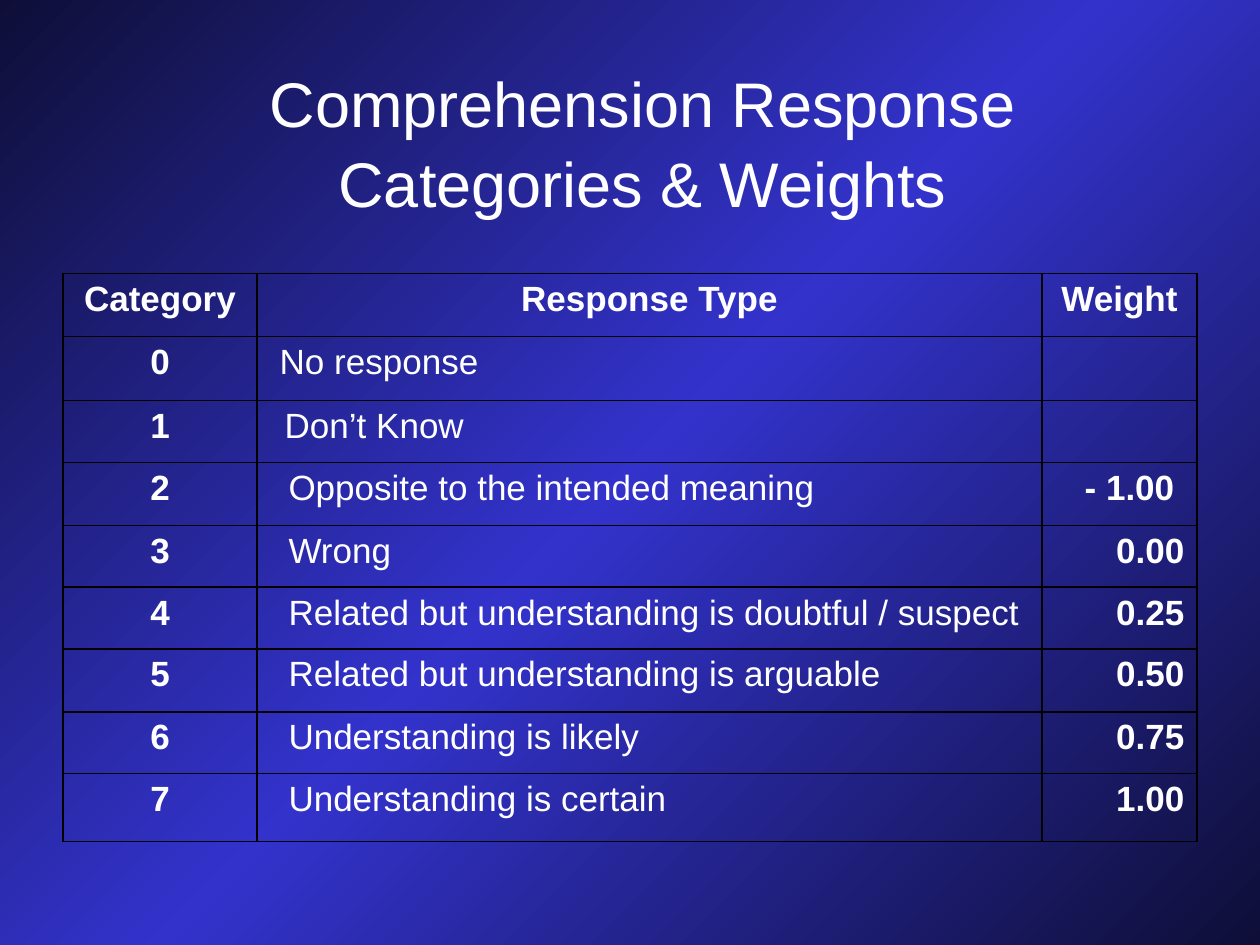
import copy
from dataclasses import dataclass

import pptx
import pptx.dml.color
import pptx.enum.text
import pptx.oxml
import pptx.oxml.ns
import pptx.util

Inches = pptx.util.Inches
Align = pptx.enum.text.PP_ALIGN


@dataclass(frozen=True)
class Theme:
    font: str = "Arial"
    text: str = "FFFFFF"
    border: str = "000000"
    background: tuple = ((0, "0E0E38"), (0.5, "3333CC"), (1, "0E0E38"))
    title_size: int = 36
    table_size: int = 20
    border_width: float = 1


class SlideBuilder:
    """Draws styled elements on the current slide."""

    def __init__(self, slide, theme):
        self.slide = slide
        self.theme = theme

    def background(self):
        fill = self.slide.background.fill
        fill.gradient()
        fill.gradient_angle = 315
        stop_list = fill._fill._gradFill.gsLst
        stop_list.append(copy.deepcopy(stop_list[-1]))
        for stop, (position, color) in zip(fill.gradient_stops, self.theme.background):
            stop.position = position
            stop.color.rgb = pptx.dml.color.RGBColor.from_string(color)

    def style_text(self, paragraph, text, size, align, bold=False):
        paragraph.text = text
        paragraph.alignment = align
        formats = {"name": self.theme.font, "size": pptx.util.Pt(size), "bold": bold}
        for attribute, value in formats.items():
            setattr(paragraph.font, attribute, value)
        paragraph.font.color.rgb = pptx.dml.color.RGBColor.from_string(self.theme.text)

    def title(self, text, left, top, width, height):
        box = self.slide.shapes.add_textbox(
            Inches(left), Inches(top), Inches(width), Inches(height))
        frame = box.text_frame
        frame.word_wrap = True
        frame.vertical_anchor = pptx.enum.text.MSO_ANCHOR.MIDDLE
        self.style_text(frame.paragraphs[0], text, self.theme.title_size, Align.CENTER)
        frame.paragraphs[0].line_spacing = 1.05

    def borders(self, cell):
        properties = cell._tc.get_or_add_tcPr()
        width = pptx.util.Pt(self.theme.border_width)
        for index, side in enumerate(("lnL", "lnR", "lnT", "lnB")):
            properties.insert(index, pptx.oxml.parse_xml(
                f'<a:{side} {pptx.oxml.ns.nsdecls("a")} w="{width}"><a:solidFill>'
                f'<a:srgbClr val="{self.theme.border}"/></a:solidFill></a:{side}>'))

    def table(self, left, top, widths, heights):
        grid = self.slide.shapes.add_table(
            len(heights), len(widths), Inches(left), Inches(top),
            Inches(sum(widths)), Inches(sum(heights))).table
        grid.first_row = grid.horz_banding = False
        for column, width in zip(grid.columns, widths):
            column.width = Inches(width)
        for row, height in zip(grid.rows, heights):
            row.height = Inches(height)
        for cell in grid.iter_cells():
            cell.fill.background()
            self.borders(cell)
        return grid

    def cell(self, cell, text, align, bold=True, indent=0):
        side = "margin_right" if align == Align.RIGHT else "margin_left"
        setattr(cell, side, Inches(0.1 + indent))
        self.style_text(
            cell.text_frame.paragraphs[0], text, self.theme.table_size, align, bold)


HEADINGS = ("Category", "Response Type", "Weight")
RESPONSES = (
    ("No response", 0.08, "", 0),
    ("Don’t Know", 0.12, "", 0),
    ("Opposite to the intended meaning", 0.15, "- 1.00", 0.08),
    ("Wrong", 0.15, "0.00", 0),
    ("Related but understanding is doubtful / suspect", 0.15, "0.25", 0),
    ("Related but understanding is arguable", 0.15, "0.50", 0),
    ("Understanding is likely", 0.15, "0.75", 0),
    ("Understanding is certain", 0.15, "1.00", 0),
)


def main():
    deck = pptx.Presentation()
    deck.slide_width, deck.slide_height = Inches(10), Inches(7.5)
    builder = SlideBuilder(deck.slides.add_slide(deck.slide_layouts[6]), Theme())
    builder.background()

    weights = builder.table(
        0.5, 2.17, (1.54, 6.23, 1.23), (0.5, 0.51, *(0.49, 0.5, 0.49) * 2, 0.54))
    for column, heading in enumerate(HEADINGS):
        builder.cell(weights.cell(0, column), heading, Align.CENTER)
    for category, (response, indent, weight, inset) in enumerate(RESPONSES):
        row = category + 1
        builder.cell(weights.cell(row, 0), str(category), Align.CENTER)
        builder.cell(weights.cell(row, 1), response, Align.LEFT, False, indent)
        if weight:
            builder.cell(weights.cell(row, 2), weight, Align.RIGHT, indent=inset)

    builder.title("Comprehension Response Categories & Weights", 0.85, 0.49, 8.5, 1.25)
    deck.save("out.pptx")


if __name__ == "__main__":
    main()
